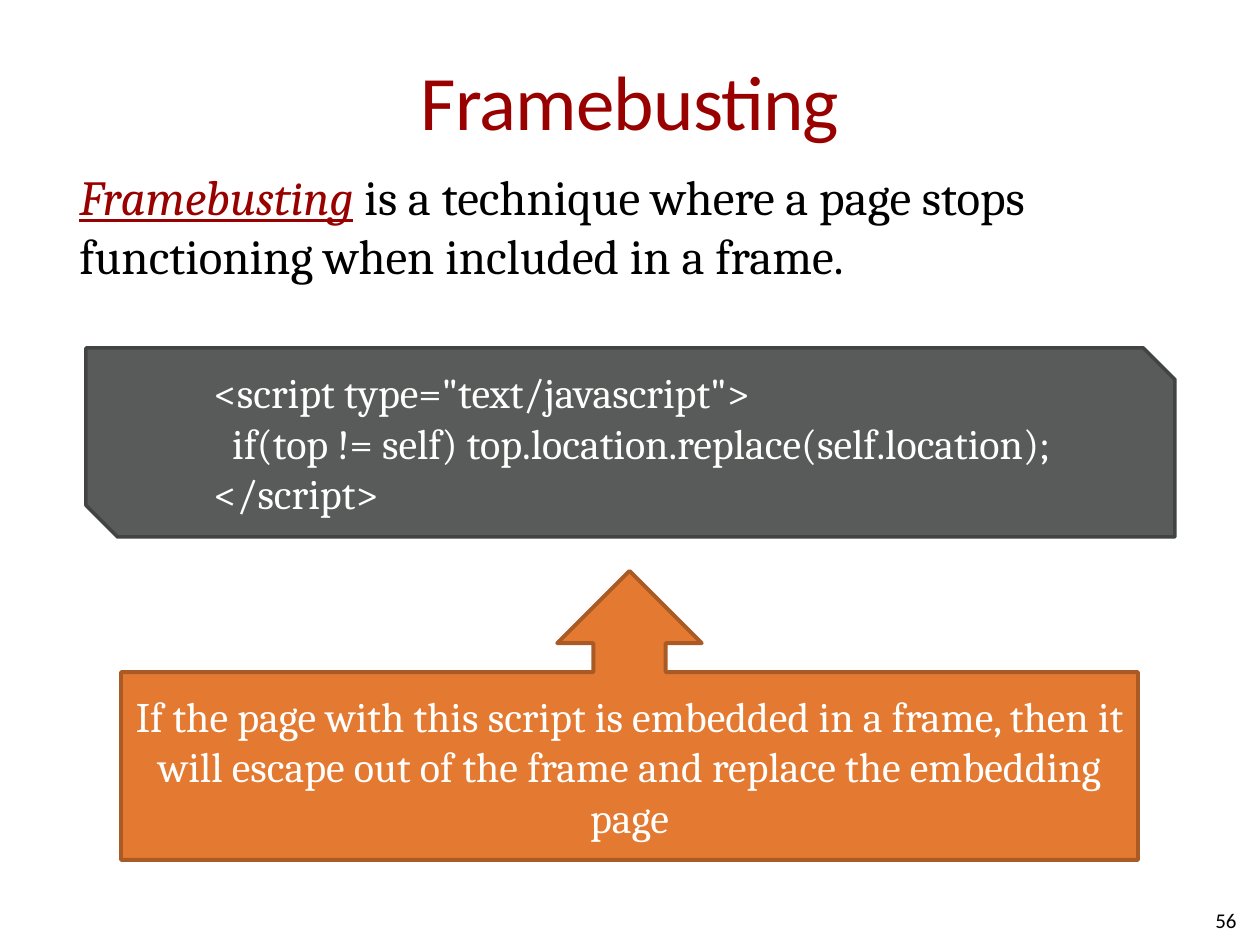
from pptx import Presentation
from pptx.dml.color import RGBColor
from pptx.enum.shapes import MSO_SHAPE
from pptx.enum.text import MSO_ANCHOR, PP_ALIGN
from pptx.util import Emu, Pt

PX = 914400 // 126
LEFT, CENTER, RIGHT = PP_ALIGN.LEFT, PP_ALIGN.CENTER, PP_ALIGN.RIGHT
TOP, MIDDLE = MSO_ANCHOR.TOP, MSO_ANCHOR.MIDDLE
SNIPPED = MSO_SHAPE.SNIP_2_DIAG_RECTANGLE
UP_CALLOUT = MSO_SHAPE.UP_ARROW_CALLOUT

RED, BLACK, WHITE = "990000", "000000", "FFFFFE"
TITLE = {"name": "Calibri", "size": Pt(44), "color": RED}
NUMBER = {"name": "Calibri", "size": Pt(12), "color": BLACK}
BODY = {"name": "Cambria", "size": Pt(28), "color": BLACK}
TERM = {**BODY, "color": RED, "italic": True, "underline": True}
LIGHT = {"name": "Cambria", "size": Pt(24), "color": WHITE}

CODE = (
    '<script type="text/javascript">',
    "  if(top != self) top.location.replace(self.location);",
    "</script>",
)
EFFECT = (
    "If the page with this script is embedded in a frame, then it will "
    "escape out of the frame and replace the embedding page"
)


def px(*lengths):
    return [Emu(length * PX) for length in lengths]


def rgb(value):
    return RGBColor.from_string(value)


def add_span(para, text, style):
    span = para.add_run()
    span.text = text
    for key, value in style.items():
        if key == "color":
            span.font.color.rgb = rgb(value)
        else:
            setattr(span.font, key, value)
    return span


def write(shape, paragraphs, align=LEFT, anchor=MIDDLE, **margins):
    """Fill a shape with paragraphs, each a list of (text, style) pairs."""
    frame = shape.text_frame
    frame.word_wrap = True
    frame.vertical_anchor = anchor
    for side, length in margins.items():
        setattr(frame, f"margin_{side}", Emu(length * PX))
    for index, spans in enumerate(paragraphs):
        para = frame.add_paragraph() if index else frame.paragraphs[0]
        para.alignment = align
        for text, style in spans:
            add_span(para, text, style)


def add_text(page, place, paragraphs, **layout):
    box = page.shapes.add_textbox(*px(*place))
    write(box, paragraphs, **layout)
    return box


def add_panel(page, kind, place, fill, line, width, paragraphs, **layout):
    panel = page.shapes.add_shape(kind, *px(*place))
    panel.shadow.inherit = False
    panel.fill.solid()
    panel.fill.fore_color.rgb = rgb(fill)
    panel.line.color.rgb = rgb(line)
    panel.line.width = Pt(width)
    write(panel, paragraphs, **layout)


def main():
    deck = Presentation()
    deck.slide_width, deck.slide_height = px(1260, 945)
    page = deck.slides.add_slide(deck.slide_layouts[6])

    title = add_text(page, (63, 21, 1134, 158), [[("Framebusting", TITLE)]],
                     align=CENTER, left=0, right=0)
    title_span = title.text_frame.paragraphs[0].runs[0]
    title_span.font._element.set("spc", "-50")

    add_text(page, (955, 895, 294, 50), [[("56", NUMBER)]], align=RIGHT)
    definition = [
        ("Framebusting", TERM),
        (" is a technique where a page stops functioning "
         "when included in a frame.", BODY),
    ]
    add_text(page, (67, 160, 1130, 131), [definition], anchor=TOP)

    add_panel(page, SNIPPED, (86, 348, 1089, 189), "595A5A", "424343", 2,
              [[(line, LIGHT)] for line in CODE], left=112)
    add_panel(page, UP_CALLOUT, (121, 571, 1017, 289), "E47932", "A95A25", 2.25,
              [[(EFFECT, LIGHT)]], align=CENTER)

    deck.save("out.pptx")


if __name__ == "__main__":
    main()
